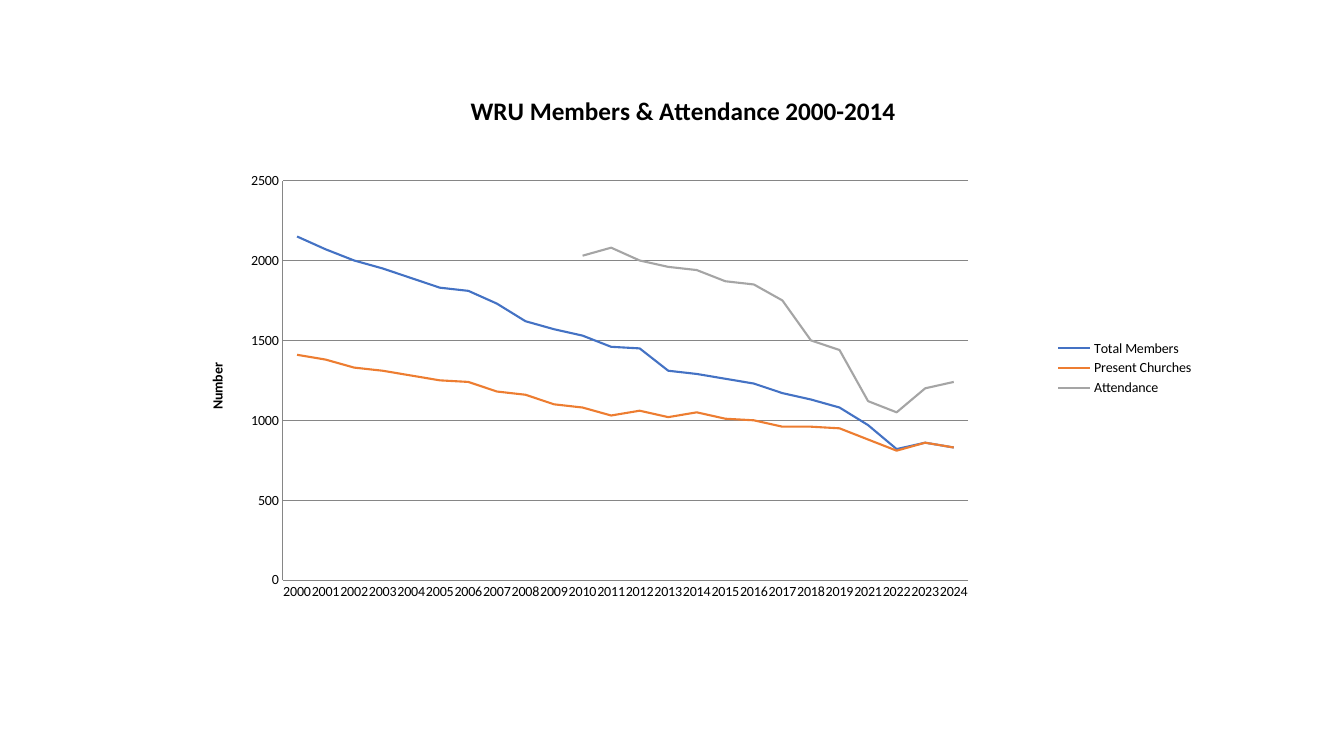
from lxml import etree
from pptx import Presentation
from pptx.chart.data import CategoryChartData
from pptx.dml.color import RGBColor
from pptx.enum.chart import XL_CHART_TYPE as CT, XL_LEGEND_POSITION as LP, XL_TICK_MARK as TM
from pptx.oxml.ns import qn
from pptx.util import Pt

rgb = RGBColor.from_string
CHART_W, CHART_H = 745, 422


def set_title(title, text, size=10, bold=True, color="000000", font="Calibri"):
    p = title.text_frame.paragraphs[0]
    r = p.add_run()
    r.text = text
    r.font.size, r.font.bold, r.font.name = Pt(size), bold, font
    r.font.color.rgb = rgb(color)


def set_layout(el, index, x, y, w=None, h=None, target=None):
    """Place a chart part, in points from the chart's top left corner."""
    for old in el.findall(qn("c:layout")):
        el.remove(old)
    layout = etree.Element(qn("c:layout"))
    manual = etree.SubElement(layout, qn("c:manualLayout"))
    parts = {"layoutTarget": target, "xMode": "edge", "yMode": "edge",
             "x": x / CHART_W, "y": y / CHART_H,
             "w": w and w / CHART_W, "h": h and h / CHART_H}
    for tag, val in parts.items():
        if val is not None:
            etree.SubElement(manual, qn("c:" + tag)).set("val", str(val))
    el.insert(index, layout)


prs = Presentation()
prs.slide_width, prs.slide_height = Pt(960), Pt(540)
s = prs.slides.add_slide(prs.slide_layouts[6])

# Data
years = [y for y in range(2000, 2025) if y != 2020]
series = [
    ("Total Members", "4472C4",
     [2150, 2070, 2000, 1950, 1890, 1830, 1810, 1730, 1620, 1570, 1530, 1460,
      1450, 1310, 1290, 1260, 1230, 1170, 1130, 1080, 970, 820, 860, 830]),
    ("Present Churches", "ED7D31",
     [1410, 1380, 1330, 1310, 1280, 1250, 1240, 1180, 1160, 1100, 1080, 1030,
      1060, 1020, 1050, 1010, 1000, 960, 960, 950, 880, 810, 860, 830]),
    ("Attendance", "A5A5A5",
     [None] * 10 + [2030, 2080, 2000, 1960, 1940, 1870, 1850, 1750, 1500, 1440,
                    1120, 1050, 1200, 1240]),
]
data = CategoryChartData()
data.categories = [str(y) for y in years]
for name, _, vals in series:
    data.add_series(name, vals)

# Chart
chart = s.shapes.add_chart(CT.LINE, Pt(115), Pt(52.5), Pt(CHART_W), Pt(CHART_H), data).chart
chart.font.name, chart.font.size = "Calibri", Pt(10)
chart.font.color.rgb = rgb("000000")
plot_area = chart.plots[0]._element.getparent()
set_layout(plot_area, 0, x=87, y=76.5, w=489.5, h=285.5, target="inner")

# Lines
for line, (_, color, _) in zip(chart.plots[0].series, series):
    line.smooth = False
    line.format.line.width = Pt(1.5)
    line.format.line.color.rgb = rgb(color)

# Axes
cat, val = chart.category_axis, chart.value_axis
val.minimum_scale, val.maximum_scale, val.major_unit = 0, 2500, 500
val.has_major_gridlines = True
for axis in (cat, val):
    axis.major_tick_mark = axis.minor_tick_mark = TM.NONE
for part in (cat, val, val.major_gridlines):
    part.format.line.color.rgb = rgb("868686")
    part.format.line.width = Pt(0.75)

# Titles
set_title(chart.chart_title, "WRU Members & Attendance 2000-2014", size=18)
set_layout(chart.chart_title._element, 1, x=218, y=11)
set_title(val.axis_title, "Number")
set_layout(val.axis_title._element, 1, x=32, y=205)

# Legend
chart.has_legend = True
chart.legend.position = LP.RIGHT
chart.legend.include_in_layout = False
set_layout(chart.legend._element, 1, x=636.5, y=188, w=104, h=45)

prs.save("out.pptx")
